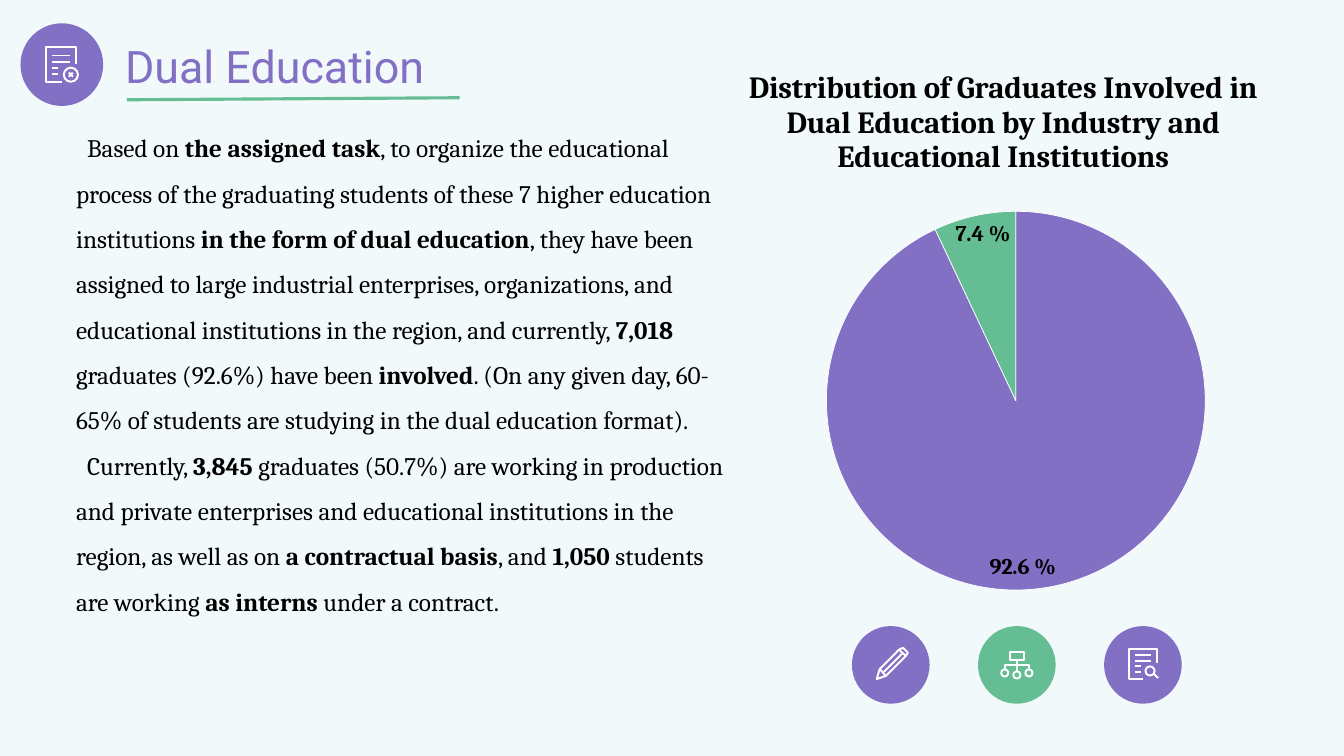
from lxml import etree
from pptx import Presentation, util as u
from pptx.chart.data import CategoryChartData
from pptx.dml.color import RGBColor
from pptx.enum import chart as charts, shapes, text
from pptx.oxml import parse_xml
from pptx.oxml.ns import nsdecls, qn

WIDTH, HEIGHT = u.Inches(13.33), u.Inches(7.5)
PURPLE, GREEN, WHITE, BLACK = "8270C4", "64BD93", "FFFFFF", "000000"
HUNDREDTH = u.Inches(0.01)

# Icons: strokes and rings (x, y, diameter) in hundredths of an inch from the centre
CANCELLED_PAGE = (
    [[(0, 17), (-16, 17), (-16, -17), (14, -17), (14, -1)],
     [(-10, -9), (8, -9)], [(-10, -3), (8, -3)], [(-10, 3), (-4, 3)],
     [(-10, 9), (-4, 9)], [(7, 8), (11, 12)], [(7, 12), (11, 8)]],
    [(9, 10, 14)])
PENCIL = (
    [[(-14, 14), (-11, 4), (8, -15), (12, -17), (17, -12), (15, -9), (-5, 11), (-14, 14)],
     [(8, -15), (15, -9)], [(-11, 4), (-5, 11)], [(-7, 7), (11, -11)]],
    [])
TREE = (
    [[(-7, -13), (7, -13), (7, -5), (-7, -5), (-7, -13)],
     [(0, -5), (0, 6)], [(-12, 5), (-12, 0), (12, 0), (12, 5)]],
    [(-12, 8, 7), (0, 10, 7), (12, 8, 7)])
SEARCHED_PAGE = (
    [[(0, 14), (-14, 14), (-14, -16), (14, -16), (14, -2)],
     [(-8, -10), (8, -10)], [(-8, -4), (8, -4)], [(-8, 1), (-2, 1)],
     [(-8, 7), (-2, 7)], [(11, 9), (15, 13)]],
    [(7, 6, 9)])

# Asterisk pairs enclose bold words
BODY = [
    "Based on **the assigned task**, to organize the educational process of the "
    "graduating students of these 7 higher education institutions** in the form of "
    "dual education**, they have been assigned to large industrial enterprises, "
    "organizations, and educational institutions in the region, and currently, "
    "**7,018** graduates (92.6%) have been **involved**. (On any given day, 60-65% "
    "of students are studying in the dual education format).",
    "Currently, **3,845 **graduates (50.7%) are working in production and private "
    "enterprises and educational institutions in the region, as well as on "
    "**a contractual basis**, and **1,050** students are working **as interns** "
    "under a contract.",
]


def color(value):
    return RGBColor.from_string(value)


def across(percent):
    return round(WIDTH * percent / 100)


def down(percent):
    return round(HEIGHT * percent / 100)


def box(left, top, width, height):
    """Percentages of the slide's size as lengths."""
    return across(left), down(top), across(width), down(height)


def set_font(font, name, size, value, bold=None):
    font.name, font.size, font.bold = name, u.Pt(size), bold
    font.color.rgb = color(value)


def paint(shape, fill=None, line=None):
    shape.shadow.inherit = False
    if fill:
        shape.fill.solid()
        shape.fill.fore_color.rgb = color(fill)
    else:
        shape.fill.background()
    if line:
        shape.line.color.rgb = color(line)
        shape.line.width = u.Pt(1.4)
    else:
        shape.line.fill.background()


def add_backdrop(slide):
    backdrop = slide.shapes.add_shape(shapes.MSO_SHAPE.RECTANGLE, *box(0, 0, 100, 100))
    paint(backdrop, fill="F2F9FB")
    # Behind the title placeholder
    slide.shapes._spTree.insert(2, backdrop._element)


def add_disc(slide, x, y, diameter, **colors):
    disc = slide.shapes.add_shape(shapes.MSO_SHAPE.OVAL, round(x - diameter / 2),
                                  round(y - diameter / 2), diameter, diameter)
    paint(disc, **colors)


def add_icon(slide, x, y, diameter, fill, icon):
    strokes, rings = icon
    add_disc(slide, x, y, diameter, fill=fill)
    builder = slide.shapes.build_freeform(*strokes[0][0], scale=HUNDREDTH)
    builder.add_line_segments(strokes[0][1:], close=False)
    for start, *points in strokes[1:]:
        builder.move_to(*start)
        builder.add_line_segments(points, close=False)
    paint(builder.convert_to_shape(x, y), line=WHITE)
    for ring_x, ring_y, ring_diameter in rings:
        add_disc(slide, x + ring_x * HUNDREDTH, y + ring_y * HUNDREDTH,
                 ring_diameter * HUNDREDTH, line=WHITE)


def add_title(slide, words):
    title = slide.shapes.title
    title.left, title.top, title.width, title.height = box(8.55, 4.4, 52.5, 8.53)
    frame = title.text_frame
    frame.text = words
    frame.vertical_anchor = text.MSO_ANCHOR.MIDDLE
    frame.auto_size = text.MSO_AUTO_SIZE.SHAPE_TO_FIT_TEXT
    paragraph = frame.paragraphs[0]
    paragraph.alignment = text.PP_ALIGN.LEFT
    set_font(paragraph.font, "Roboto", 32, PURPLE)


def add_underline(slide):
    line = slide.shapes.add_connector(shapes.MSO_CONNECTOR.STRAIGHT, across(9.45),
                                      down(13.2), across(34.2), down(12.93))
    line.line.color.rgb = color(GREEN)
    line.line.width = u.Pt(2.25)
    etree.SubElement(line._element.spPr, qn("a:effectLst"))


def add_body(slide, paragraphs):
    frame = slide.shapes.add_textbox(*box(4.92, 14.87, 49.65, 73.6)).text_frame
    frame.word_wrap = True
    for index, words in enumerate(paragraphs):
        paragraph = frame.add_paragraph() if index else frame.paragraphs[0]
        paragraph.line_spacing = 1.5
        paragraph._p.get_or_add_pPr().set("indent", str(u.Inches(0.11)))
        set_font(paragraph.font, "Cambria", 18, BLACK)
        for part, piece in enumerate(words.split("**")):
            run = paragraph.add_run()
            run.text = piece
            run.font.bold = part % 2 == 1


def set_layout(parent, index, modes, **percents):
    """Place a chart part by percentages of the chart's size."""
    for old in parent.findall(qn("c:layout")):
        parent.remove(old)
    values = modes + [(name, percent / 100) for name, percent in percents.items()]
    marks = "".join(f'<c:{name} val="{value}"/>' for name, value in values)
    parent.insert(index, parse_xml(
        f'<c:layout {nsdecls("c")}><c:manualLayout>{marks}</c:manualLayout></c:layout>'))


def write_chart_text(frame, words, size):
    run = frame.paragraphs[0].add_run()
    run.text = words
    set_font(run.font, "Cambria", size, BLACK, True)


def add_pie(slide):
    data = CategoryChartData()
    data.categories = ["1", "2", "3", "4"]
    data.add_series("Series 1", [93, 7, None, None])
    chart = slide.shapes.add_chart(charts.XL_CHART_TYPE.PIE,
                                   *box(44.85, 4.4, 53.78, 82.67), data).chart
    set_font(chart.font, "Manrope", 10, BLACK, True)
    chart.has_legend = False
    chart.has_title = True
    write_chart_text(chart.chart_title.text_frame,
                     "Distribution of Graduates Involved in Dual Education "
                     "by Industry and Educational Institutions", 22)
    chart.chart_title.include_in_layout = False
    edges = [("xMode", "edge"), ("yMode", "edge")]
    set_layout(chart.chart_title._element, 1, edges, x=19.45, y=4.6)
    set_layout(chart._chartSpace.chart.plotArea, 0, [("layoutTarget", "inner")] + edges,
               x=17.1, y=28.5, w=80.1, h=60.6)

    plot = chart.plots[0]
    plot.vary_by_categories = True
    points = plot.series[0].points
    for index, fill in enumerate([PURPLE, GREEN] * 2):
        style = points[index].format
        style.fill.solid()
        style.fill.fore_color.rgb = color(fill)
        style.line.color.rgb = color(WHITE)
        style.line.width = u.Pt(0.5)
    for index, words in enumerate(["92.6 %", "7.4 %"]):
        label = points[index].data_label
        write_chart_text(label.text_frame, words, 16)
        label.position = charts.XL_LABEL_POSITION.INSIDE_END
    # Keep the small slice's label inside it
    small_label = plot.series[0]._element.findall(".//" + qn("c:dLbl"))[1]
    set_layout(small_label, 1, [], x=-2.8, y=0)


def main():
    presentation = Presentation()
    presentation.slide_width, presentation.slide_height = WIDTH, HEIGHT
    slide = presentation.slides.add_slide(presentation.slide_layouts[5])
    add_backdrop(slide)

    # Heading
    add_icon(slide, across(4.6), down(8.55), u.Inches(0.82), PURPLE, CANCELLED_PAGE)
    add_title(slide, "Dual Education")
    add_underline(slide)

    # Text and chart
    add_body(slide, BODY)
    add_pie(slide)

    # Row of icons below the chart
    row = [(PURPLE, PENCIL), (GREEN, TREE), (PURPLE, SEARCHED_PAGE)]
    for index, (fill, icon) in enumerate(row):
        add_icon(slide, across(66.28 + 9.38 * index), down(87.95),
                 u.Inches(0.77), fill, icon)

    presentation.save("out.pptx")


if __name__ == "__main__":
    main()
